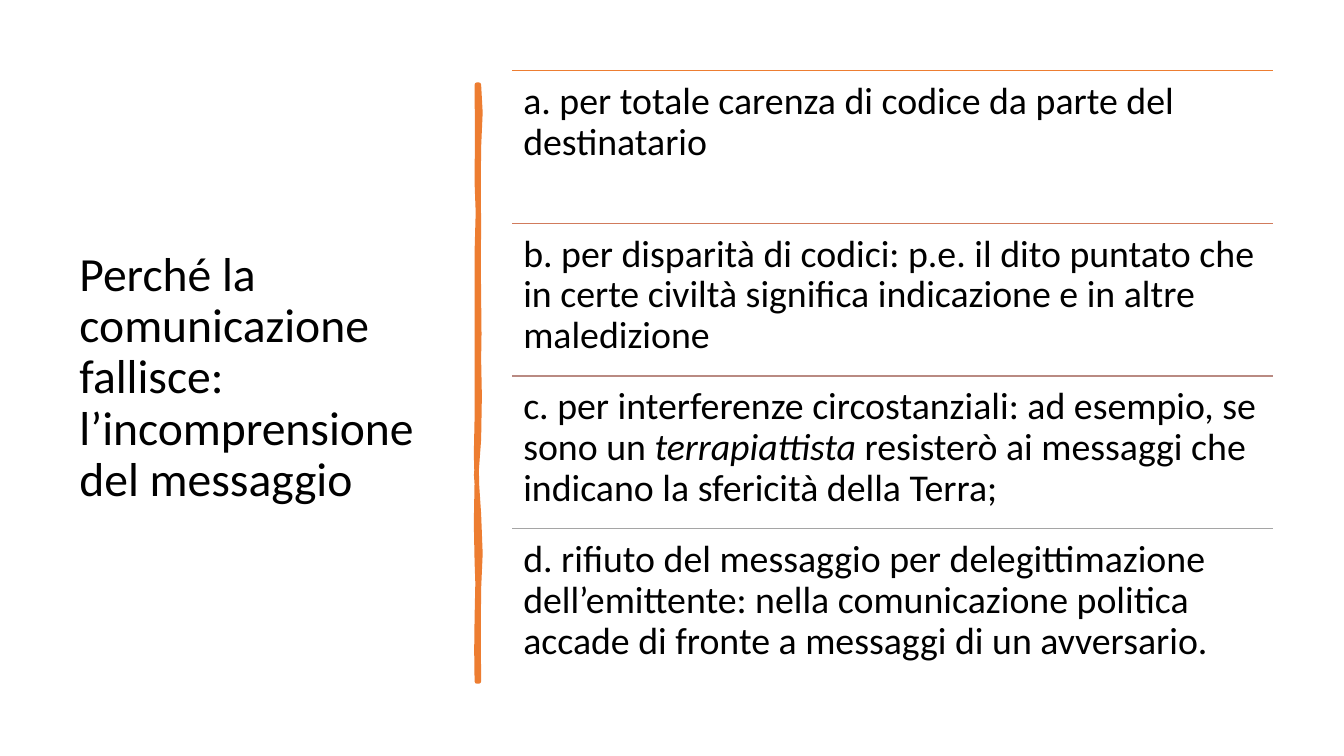
from lxml.etree import SubElement
from pptx import Presentation
from pptx.dml.color import RGBColor
from pptx.enum.shapes import MSO_CONNECTOR as CONN
from pptx.enum.text import MSO_ANCHOR as ANCHOR
from pptx.oxml.ns import qn
from pptx.util import Inches, Pt

# Content: each text is a list of (words, italic) runs
TITLE = [("Perché la comunicazione fallisce:\vl’incomprensione del messaggio", False)]
REASONS = [
    ("ED7D31", [("a. per totale carenza di codice da parte del destinatario", False)]),
    ("D17B5C", [("b. per disparità di codici: p.e. il dito puntato che in certe civiltà "
                 "significa indicazione e in altre maledizione", False)]),
    ("B98A82", [("c. per interferenze circostanziali: ad esempio, se sono un ", False),
                ("terrapiattista ", True),
                ("resisterò ai messaggi che indicano la sfericità della Terra;", False)]),
    ("A5A5A5", [("d. rifiuto del messaggio per delegittimazione dell’emittente: nella "
                 "comunicazione politica accade di fronte a messaggi di un avversario.", False)]),
]

# Hand-drawn bar: start point, then Bezier segments (control, control, end)
BAR_START = (4.75, 0.84)
BAR_CURVES = [
    ((4.77, 1.02), (4.77, 1.19), (4.75, 1.46)),
    ((4.73, 1.73), (4.76, 1.95), (4.75, 2.26)),
    ((4.74, 2.57), (4.75, 2.62), (4.75, 2.94)),
    ((4.74, 3.25), (4.77, 3.42), (4.75, 3.56)),
    ((4.73, 3.70), (4.79, 4.14), (4.75, 4.36)),
    ((4.71, 4.57), (4.72, 4.84), (4.75, 5.10)),
    ((4.77, 5.36), (4.77, 5.64), (4.75, 5.84)),
    ((4.73, 6.03), (4.76, 6.50), (4.75, 6.76)),
    ((4.74, 6.76), (4.73, 6.76), (4.73, 6.76)),
    ((4.74, 6.46), (4.71, 6.44), (4.73, 6.13)),
    ((4.74, 5.83), (4.74, 5.70), (4.73, 5.57)),
    ((4.72, 5.44), (4.72, 4.95), (4.73, 4.77)),
    ((4.73, 4.59), (4.71, 4.45), (4.73, 4.15)),
    ((4.74, 3.86), (4.72, 3.73), (4.73, 3.35)),
    ((4.74, 2.98), (4.72, 2.81), (4.73, 2.50)),
    ((4.74, 2.18), (4.75, 2.00), (4.73, 1.81)),
    ((4.70, 1.63), (4.77, 1.04), (4.73, 0.84)),
]
STEPS = 2

THEME = {"font": "Calibri", "text": "000000", "bar": "ED7D31",
         "title_size": 34, "reason_size": 27, "bar_width": 3.25, "rule_width": 1}

# Layout of the list
LIST_LEFT, LIST_TOP, LIST_WIDTH, LIST_HEIGHT = 5.08, 0.7, 7.55, 6.06
ROW = LIST_HEIGHT / len(REASONS)


def rgb(color):
    return RGBColor.from_string(color)


def add_text(slide, runs, box, *, size, anchor=ANCHOR.TOP, inset=(0.1, 0.05)):
    tf = slide.shapes.add_textbox(*map(Inches, box)).text_frame
    tf.word_wrap = True
    tf.vertical_anchor = anchor
    tf.margin_left = tf.margin_right = Inches(inset[0])
    tf.margin_top = tf.margin_bottom = Inches(inset[1])
    p = tf.paragraphs[0]
    p.line_spacing = 0.9
    for words, italic in runs:
        for i, part in enumerate(words.split("\v")):
            if i:
                p.add_line_break()
            r = p.add_run()
            r.text = part
            r.font.name = THEME["font"]
            r.font.size = Pt(size)
            r.font.italic = italic
            r.font.color.rgb = rgb(THEME["text"])


def add_rule(slide, y, color):
    s = slide.shapes.add_connector(CONN.STRAIGHT, Inches(LIST_LEFT), Inches(y),
                                   Inches(LIST_LEFT + LIST_WIDTH), Inches(y))
    s.line.color.rgb = rgb(color)
    s.line.width = Pt(THEME["rule_width"])
    SubElement(s._element.spPr, qn("a:effectLst"))


def bezier(p0, p1, p2, p3):
    for k in range(1, STEPS + 1):
        t = k / STEPS
        u = 1 - t
        yield tuple(Inches(u**3 * a + 3 * u * u * t * b + 3 * u * t * t * c + t**3 * d)
                    for a, b, c, d in zip(p0, p1, p2, p3))


def add_bar(slide):
    points, start = [], BAR_START
    for c1, c2, end in BAR_CURVES:
        points += bezier(start, c1, c2, end)
        start = end
    fb = slide.shapes.build_freeform(*map(Inches, BAR_START))
    fb.add_line_segments(points, close=True)
    s = fb.convert_to_shape()
    s.shadow.inherit = False
    s.fill.solid()
    s.fill.fore_color.rgb = rgb(THEME["bar"])
    s.line.color.rgb = rgb(THEME["bar"])
    s.line.width = Pt(THEME["bar_width"])
    SubElement(s._element.spPr.find(qn("a:ln")), qn("a:round"))


def main():
    prs = Presentation()
    prs.slide_width, prs.slide_height = Inches(13.33), Inches(7.5)
    slide = prs.slides.add_slide(prs.slide_layouts[6])

    # Title and bar
    add_text(slide, TITLE, (0.69, 0.7, 3.74, 6.11),
             size=THEME["title_size"], anchor=ANCHOR.MIDDLE)
    add_bar(slide)

    # Reasons, each under its rule
    for i, (color, runs) in enumerate(REASONS):
        top = LIST_TOP + i * ROW
        add_rule(slide, top, color)
        add_text(slide, runs, (LIST_LEFT, top, LIST_WIDTH, ROW),
                 size=THEME["reason_size"], inset=(0.11, 0.11))

    prs.save("out.pptx")


if __name__ == "__main__":
    main()
